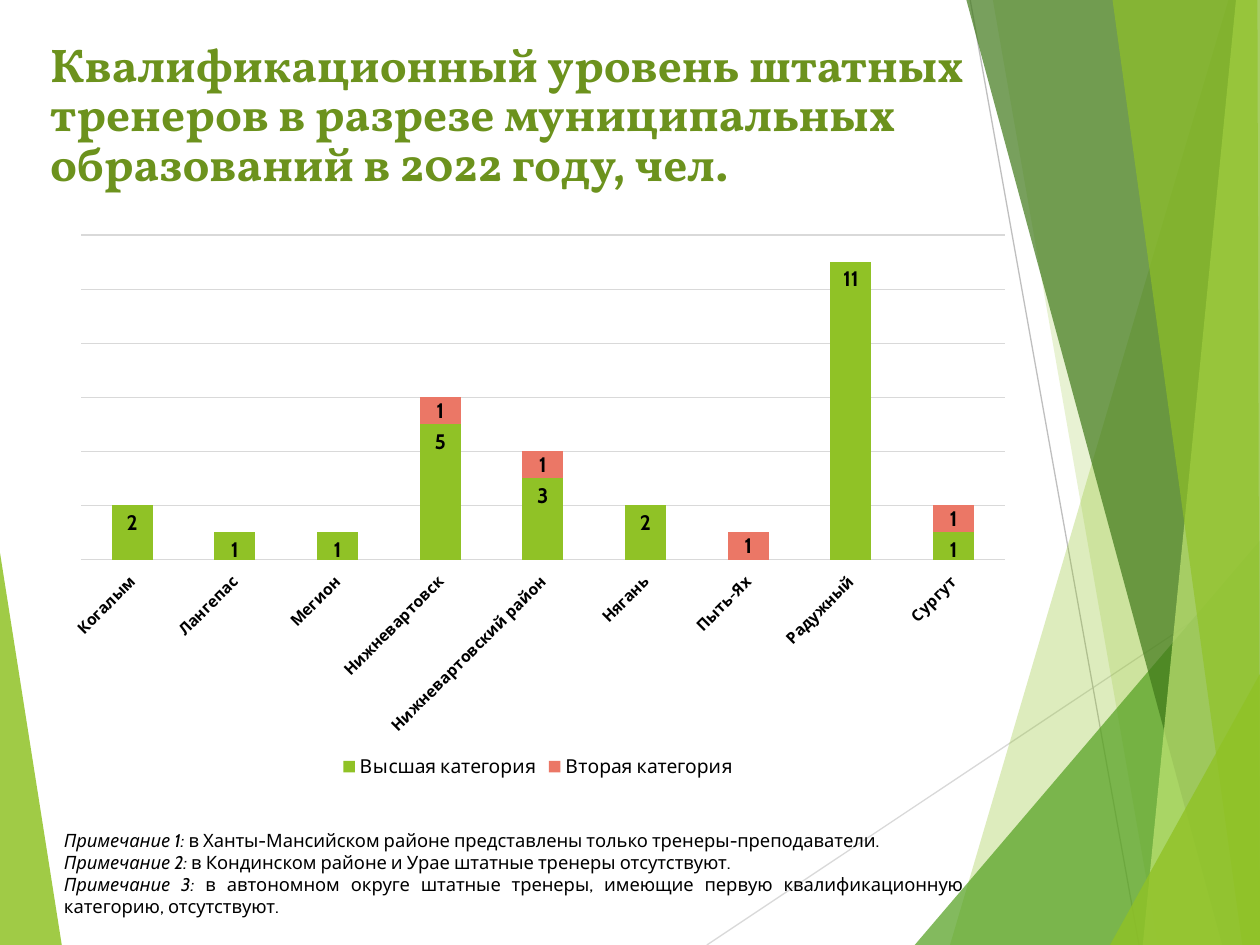
from lxml.etree import SubElement
from pptx import Presentation
from pptx.chart.data import CategoryChartData
from pptx.dml.color import RGBColor
from pptx.enum.chart import XL_CHART_TYPE as ChartType, XL_LABEL_POSITION as LabelPos
from pptx.enum.chart import XL_LEGEND_POSITION as LegendPos, XL_TICK_LABEL_POSITION as TickPos
from pptx.enum.chart import XL_TICK_MARK as TickMark
from pptx.enum.shapes import MSO_CONNECTOR as Connector
from pptx.enum.text import MSO_ANCHOR as Anchor, PP_ALIGN as Align
from pptx.oxml import parse_xml
from pptx.oxml.ns import nsdecls, qn
from pptx.util import Inches, Pt

COLORS = {
    "lime": "90C226", "green": "54A021", "forest": "3F7819", "pale": "C0E474",
    "title": "6C921D", "coral": "EB7766", "grid": "D9D9D9", "gray": "BFBFBF",
    "black": "000000",
}
PALETTE = {name: RGBColor.from_string(value) for name, value in COLORS.items()}
BODY_FONT, TITLE_FONT = "Cabin", "Vollkorn"

deck = Presentation()
deck.slide_width, deck.slide_height = Inches(10), Inches(7.5)
page = deck.slides.add_slide(deck.slide_layouts[6])
shapes = page.shapes

# GRID


def place(*shares):
    sides = (deck.slide_width, deck.slide_height)
    return [int(share * sides[i % 2] / 1000) for i, share in enumerate(shares)]


def add_text(paragraphs, area, font=BODY_FONT, size=10.5, color="black", bold=False,
             align=Align.LEFT, spacing=None, top=0.05):
    box = shapes.add_textbox(*place(*area))
    frame = box.text_frame
    frame.word_wrap = True
    frame.vertical_anchor = Anchor.TOP
    frame.margin_top = Inches(top)
    for index, runs in enumerate(paragraphs):
        para = frame.paragraphs[0] if index == 0 else frame.add_paragraph()
        para.alignment = align
        if spacing:
            para.line_spacing = spacing
        for text, italic in runs:
            span = para.add_run()
            span.text = text
            span.font.name, span.font.size = font, Pt(size)
            span.font.bold, span.font.italic = bold, italic
            span.font.color.rgb = PALETTE[color]


facets = [
    ("lime", 85, [(0, 585), (49, 1000), (0, 1000)]),
    ("lime", 30, [(975, 0), (754, 1000), (1000, 1000), (1000, 0)]),
    ("lime", 20, [(788, 0), (919, 1000), (1000, 1000), (1000, 0)]),
    ("green", 72, [(726, 1000), (1000, 572), (1000, 1000)]),
    ("forest", 70, [(767, 0), (970, 1000), (1000, 1000), (1000, 0)]),
    ("pale", 70, [(981, 0), (907, 1000), (1000, 1000), (1000, 0)]),
    ("lime", 65, [(883, 0), (986, 1000), (1000, 1000), (998, 0)]),
    ("lime", 80, [(881, 1000), (1000, 713), (1000, 1000)]),
]
rays = [("grid", (561, 1000, 1000, 610)), ("gray", (770, 0, 904, 1000))]
scale = (deck.slide_width / 1000, deck.slide_height / 1000)

for index, (color, opacity, points) in enumerate(facets):
    builder = shapes.build_freeform(*points[0], scale=scale)
    builder.add_line_segments(points[1:], close=True)
    facet = builder.convert_to_shape()
    facet.shadow.inherit = False
    facet.line.fill.background()
    facet.fill.solid()
    facet.fill.fore_color.rgb = PALETTE[color]
    tint = facet.fill._xPr.find(qn("a:solidFill"))[0]
    SubElement(tint, qn("a:alpha"), val=str(opacity * 1000))
    if index == 0:
        for ray_color, ends in rays:
            ray = shapes.add_connector(Connector.STRAIGHT, *place(*ends))
            ray.line.color.rgb = PALETTE[ray_color]
            ray.line.width = Pt(0.75)
            SubElement(ray._element.spPr, qn("a:effectLst"))

add_text([[("Квалификационный уровень штатных тренеров в разрезе муниципальных "
            "образований в 2022 году, чел.", False)]],
         (30, 28, 769, 167), font=TITLE_FONT, size=27, color="title", bold=True,
         spacing=0.87, top=0.13)

data = CategoryChartData()
data.categories = ["Когалым", "Лангепас", "Мегион", "Нижневартовск",
                   "Нижневартовский район", "Нягань", "Пыть-Ях", "Радужный", "Сургут"]
data.add_series("Высшая категория", [2, 1, 1, 5, 3, 2, None, 11, 1])
data.add_series("Вторая категория", [None, None, None, 1, 1, None, 1, None, 1])
chart = shapes.add_chart(ChartType.COLUMN_STACKED, *place(41, 237, 772, 592), data).chart
chart.has_title = False
chart.font.name, chart.font.size = BODY_FONT, Pt(10)
chart.font.color.rgb = PALETTE["black"]

chart.has_legend = True
chart.legend.position = LegendPos.BOTTOM
chart.legend.include_in_layout = False
chart.legend.font.name, chart.legend.font.size = BODY_FONT, Pt(11)
chart.legend.font.color.rgb = PALETTE["black"]

city_axis, count_axis = chart.category_axis, chart.value_axis
city_axis.major_tick_mark = TickMark.NONE
city_axis.tick_label_position = TickPos.LOW
city_font = city_axis.tick_labels.font
city_font.name, city_font.size, city_font.bold = BODY_FONT, Pt(9), True
city_font.color.rgb = PALETTE["black"]
city_axis._element.find(qn("c:txPr")).find(qn("a:bodyPr")).set("rot", "-2700000")
count_axis.visible = False
count_axis.minimum_scale, count_axis.maximum_scale, count_axis.major_unit = 0, 12, 2
for line in (city_axis.format.line, count_axis.major_gridlines.format.line):
    line.color.rgb = PALETTE["grid"]
    line.width = Pt(0.75)

plot = chart.plots[0]
plot.gap_width, plot.overlap, plot.vary_by_categories = 150, 100, False
positions = (LabelPos.INSIDE_END, LabelPos.CENTER)
for series, color, position in zip(plot.series, ("lime", "coral"), positions):
    series.format.fill.solid()
    series.format.fill.fore_color.rgb = PALETTE[color]
    labels = series.data_labels
    labels.show_value = True
    labels.position = position
    labels.font.name, labels.font.size, labels.font.bold = BODY_FONT, Pt(12), True
    labels.font.color.rgb = PALETTE["black"]

plot_area = chart._chartSpace.chart.plotArea
for old_layout in plot_area.findall(qn("c:layout")):
    plot_area.remove(old_layout)
plot_area.insert(0, parse_xml(
    f'<c:layout {nsdecls("c")}><c:manualLayout><c:layoutTarget val="inner"/>'
    '<c:xMode val="edge"/><c:yMode val="edge"/><c:x val="0.03"/><c:y val="0.02"/>'
    '<c:w val="0.95"/><c:h val="0.58"/></c:manualLayout></c:layout>'))

notes = [
    "в Ханты-Мансийском районе представлены только тренеры-преподаватели.",
    "в Кондинском районе и Урае штатные тренеры отсутствуют.",
    "в автономном округе штатные тренеры, имеющие первую квалификационную "
    "категорию, отсутствуют.",
]
add_text([[(f"Примечание {number}:", True), (f" {note}", False)]
          for number, note in enumerate(notes, 1)],
         (41, 871, 734, 108), align=Align.JUSTIFY)

deck.save("out.pptx")
